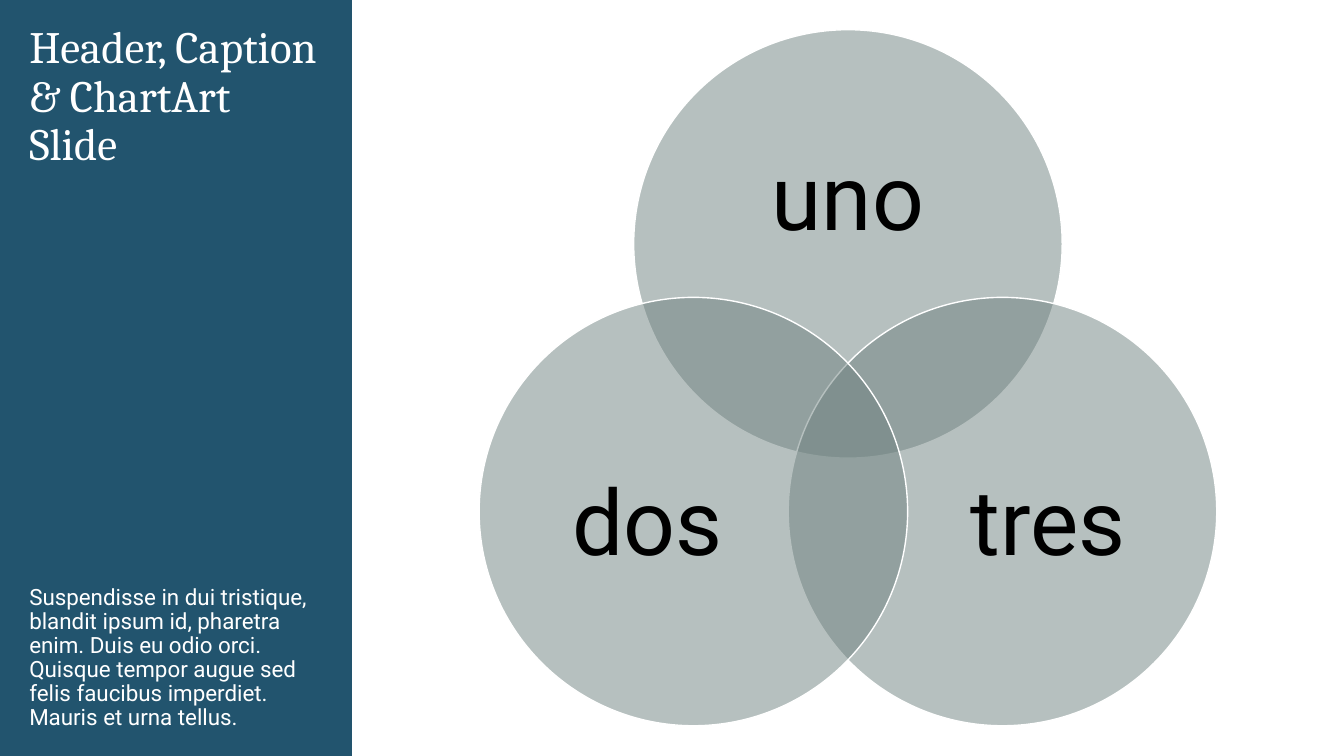
"""Build a slide with a caption panel and a three-circle Venn diagram."""
import math

from lxml import etree
from pptx import Presentation
from pptx import util as u
from pptx.dml.color import RGBColor
from pptx.enum import shapes, text
from pptx.oxml import ns

TITLE = "Header, Caption & ChartArt Slide"
CAPTION = (
    "Suspendisse in dui tristique, blandit ipsum id, pharetra enim. "
    "Duis eu odio orci. Quisque tempor augue sed felis faucibus imperdiet. "
    "Mauris et urna tellus."
)
CIRCLES = [
    {"label": "uno", "angle": 270, "label_box": (685, 104, 312, 191)},
    {"label": "tres", "angle": 30, "label_box": (912, 405, 255, 234)},
    {"label": "dos", "angle": 150, "label_box": (515, 405, 255, 234)},
]

EMU_PER_PX = 9144
SLIDE_SIZE = (1333, 750)
PANEL_BOX = (0, 0, 349, 750)
TITLE_BOX = (19, 20, 308, 355)
CAPTION_BOX = (19, 375, 308, 355)
VENN_CENTRE = (841, 419)
RING_RADIUS = 177
DIAMETER = 425

WHITE = RGBColor(0xFF, 0xFF, 0xFF)
BLACK = RGBColor(0x00, 0x00, 0x00)
TEAL = RGBColor(0x22, 0x54, 0x6E)
SAGE = RGBColor(0x6F, 0x82, 0x80)


def emu(box):
    return [u.Emu(round(length * EMU_PER_PX)) for length in box]


def place(shape, box):
    shape.left, shape.top, shape.width, shape.height = emu(box)


def write(shape, words, font, size, color, anchor, align):
    frame = shape.text_frame
    frame.word_wrap = True
    frame.auto_size = text.MSO_AUTO_SIZE.NONE
    frame.vertical_anchor = anchor
    paragraph = frame.paragraphs[0]
    paragraph.alignment = align
    paragraph.line_spacing = 0.9
    run = paragraph.add_run()
    run.text = words
    run.font.name = font
    run.font.size = u.Pt(size)
    run.font.color.rgb = color
    return paragraph


def add_panel(slide):
    panel = slide.shapes.add_shape(shapes.MSO_SHAPE.RECTANGLE, *emu(PANEL_BOX))
    panel.shadow.inherit = False
    panel.fill.solid()
    panel.fill.fore_color.rgb = TEAL
    panel.line.fill.background()
    slide.shapes._spTree.insert(2, panel._element)


def add_circle(group, angle):
    radians = math.radians(angle)
    left = VENN_CENTRE[0] + RING_RADIUS * math.cos(radians) - DIAMETER / 2
    top = VENN_CENTRE[1] + RING_RADIUS * math.sin(radians) - DIAMETER / 2
    box = emu((left, top, DIAMETER, DIAMETER))
    circle = group.shapes.add_shape(shapes.MSO_SHAPE.OVAL, *box)
    circle.shadow.inherit = False
    circle.fill.solid()
    circle.fill.fore_color.rgb = SAGE
    color = circle._element.spPr.find(ns.qn("a:solidFill"))[0]
    etree.SubElement(color, ns.qn("a:alpha"), val="50000")
    circle.line.color.rgb = WHITE
    circle.line.width = u.Pt(1)


def add_label(group, words, box):
    label = group.shapes.add_textbox(*emu(box))
    frame = label.text_frame
    frame.margin_left = frame.margin_top = frame.margin_right = frame.margin_bottom = 0
    write(label, words, "Roboto", 65, BLACK, text.MSO_ANCHOR.MIDDLE, text.PP_ALIGN.CENTER)


def main():
    presentation = Presentation()
    presentation.slide_width, presentation.slide_height = emu(SLIDE_SIZE)
    slide = presentation.slides.add_slide(presentation.slide_layouts[1])
    add_panel(slide)

    title, caption = slide.placeholders
    place(title, TITLE_BOX)
    write(title, TITLE, "Cambria", 32, WHITE, text.MSO_ANCHOR.TOP, text.PP_ALIGN.LEFT)
    place(caption, CAPTION_BOX)
    paragraph = write(
        caption, CAPTION, "Roboto", 16, WHITE, text.MSO_ANCHOR.BOTTOM, text.PP_ALIGN.LEFT
    )
    paragraph.space_before = u.Pt(10)
    properties = paragraph._p.get_or_add_pPr()
    properties.set("marL", "0")
    properties.set("indent", "0")
    etree.SubElement(properties, ns.qn("a:buNone"))

    venn = slide.shapes.add_group_shape()
    for circle in CIRCLES:
        add_circle(venn, circle["angle"])
        add_label(venn, circle["label"], circle["label_box"])
    presentation.save("out.pptx")


if __name__ == "__main__":
    main()
